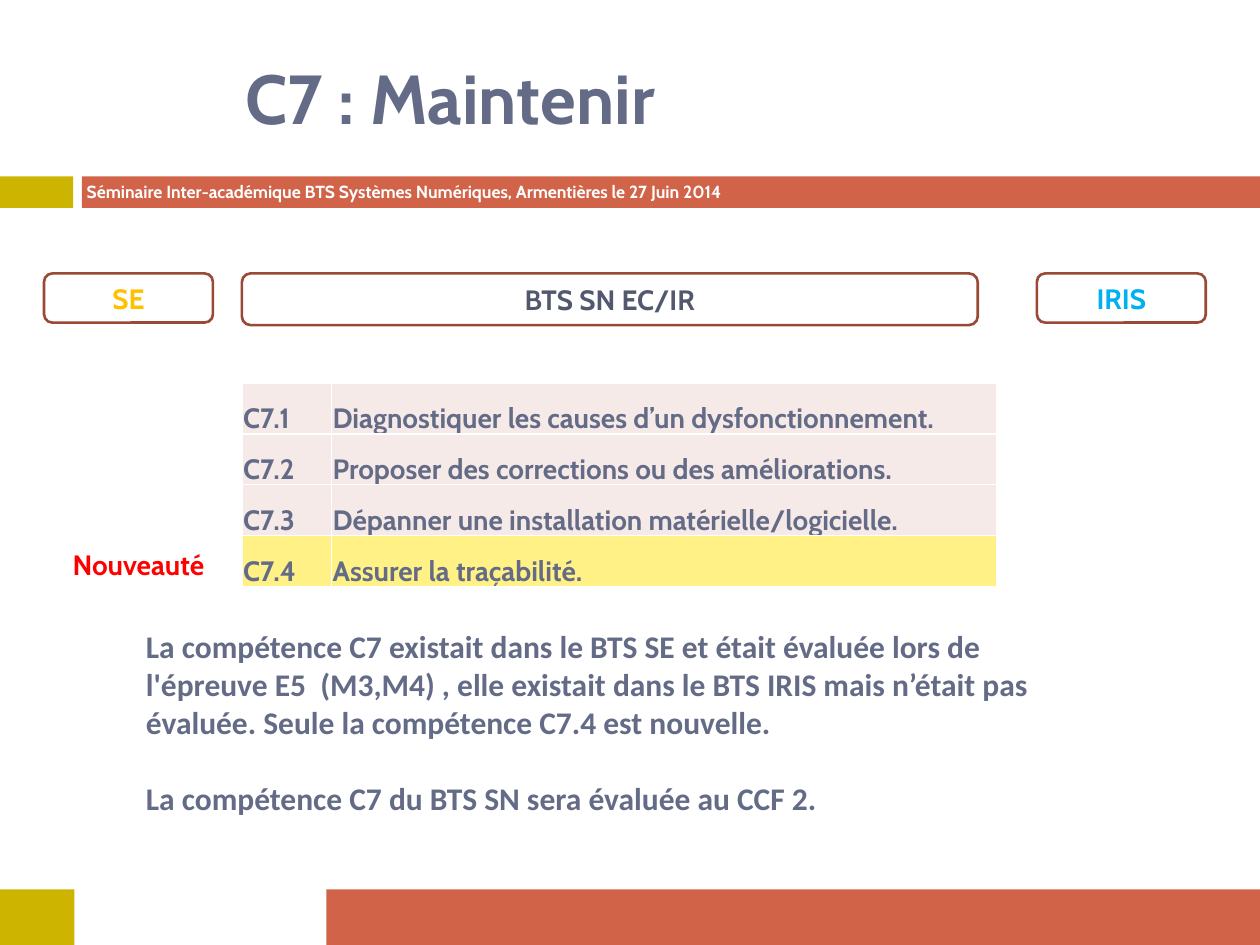
from pptx import Presentation
from pptx.dml.color import RGBColor
from pptx.enum import shapes, text
from pptx.util import Inches, Pt

OLIVE = RGBColor(0xCC, 0xB4, 0x00)
TERRACOTTA = RGBColor(0xD1, 0x63, 0x49)
BROWN = RGBColor(0x9A, 0x49, 0x36)
SLATE = RGBColor(0x64, 0x6B, 0x86)
DARK_SLATE = RGBColor(0x52, 0x58, 0x6E)
AMBER = RGBColor(0xFF, 0xC0, 0x00)
SKY = RGBColor(0x00, 0xB0, 0xF0)
RED = RGBColor(0xFF, 0x00, 0x00)
WHITE = RGBColor(0xFF, 0xFF, 0xFF)
PALE_PINK = RGBColor(0xF6, 0xEA, 0xE8)
PALE_YELLOW = RGBColor(0xFF, 0xF1, 0x85)

SKILLS = [
    ("C7.1", "Diagnostiquer les causes d’un dysfonctionnement."),
    ("C7.2", "Proposer des corrections ou des améliorations."),
    ("C7.3", "Dépanner une installation matérielle/logicielle."),
    ("C7.4", "Assurer la traçabilité."),
]
NEW_SKILL = "C7.4"
COMMENTS = [
    "La compétence C7 existait dans le BTS SE et était évaluée lors de "
    "l'épreuve E5  (M3,M4) , elle existait dans le BTS IRIS mais n’était pas "
    "évaluée. Seule la compétence C7.4 est nouvelle.",
    "La compétence C7 du BTS SN sera évaluée au CCF 2.",
]


def write(frame, *lines, size=16, color=SLATE, font="Cabin", align=text.PP_ALIGN.LEFT,
          anchor=text.MSO_ANCHOR.TOP, gap=0, line_spacing=None):
    """Fill a text frame with bold paragraphs, gap points apart."""
    frame.word_wrap = True
    frame.vertical_anchor = anchor
    for index, line in enumerate(lines):
        paragraph = frame.add_paragraph() if index else frame.paragraphs[0]
        paragraph.text = line
        paragraph.alignment = align
        paragraph.line_spacing = line_spacing
        paragraph.space_before = Pt(gap if index else 0)
        paragraph.font.name = font
        paragraph.font.size = Pt(size)
        paragraph.font.bold = True
        paragraph.font.color.rgb = color


def add_box(slide, kind, box, fill, line=None):
    shape = slide.shapes.add_shape(kind, *map(Inches, box))
    shape.shadow.inherit = False
    shape.fill.solid()
    shape.fill.fore_color.rgb = fill
    if line is None:
        shape.line.fill.background()
    else:
        shape.line.color.rgb = line
        shape.line.width = Pt(1.5)
    return shape


def add_band(slide, top, height, olive_width, red_left):
    """Draw an olive block and a red bar that runs to the right edge."""
    for left, width, fill in ((0, olive_width, OLIVE), (red_left, 10 - red_left, TERRACOTTA)):
        add_box(slide, shapes.MSO_SHAPE.RECTANGLE, (left, top, width, height), fill)


def add_text(slide, box, *lines, **style):
    write(slide.shapes.add_textbox(*map(Inches, box)).text_frame, *lines, **style)


def place_title(slide, box, title):
    shape = slide.shapes.title
    shape.left, shape.top, shape.width, shape.height = map(Inches, box)
    shape.text_frame.auto_size = text.MSO_AUTO_SIZE.NONE
    write(shape.text_frame, title, size=39.6, anchor=text.MSO_ANCHOR.MIDDLE)


def add_label(slide, box, label, color, line=BROWN):
    shape = add_box(slide, shapes.MSO_SHAPE.ROUNDED_RECTANGLE, box, WHITE, line)
    write(shape.text_frame, label, color=color, align=text.PP_ALIGN.CENTER,
          anchor=text.MSO_ANCHOR.MIDDLE)


def add_skill_table(slide, left, top, column_widths, row_height):
    table = slide.shapes.add_table(
        len(SKILLS), len(column_widths), Inches(left), Inches(top),
        Inches(sum(column_widths)), Inches(row_height * len(SKILLS))).table
    table.first_row = table.horz_banding = False
    for column, width in zip(table.columns, column_widths):
        column.width = Inches(width)
    for row, skill in zip(table.rows, SKILLS):
        for cell, content in zip(row.cells, skill):
            cell.fill.solid()
            cell.fill.fore_color.rgb = PALE_YELLOW if skill[0] == NEW_SKILL else PALE_PINK
            cell.margin_left = cell.margin_right = Inches(0.01)
            cell.margin_top, cell.margin_bottom = Inches(0.19), 0
            cell.vertical_anchor = text.MSO_ANCHOR.MIDDLE
            write(cell.text_frame, content, line_spacing=0.8)
            cell.vertical_anchor = text.MSO_ANCHOR.MIDDLE


def main():
    presentation = Presentation()
    presentation.slide_width, presentation.slide_height = Inches(10), Inches(7.5)
    slide = presentation.slides.add_slide(presentation.slide_layouts[5])

    add_band(slide, 1.4, 0.25, olive_width=0.58, red_left=0.65)
    add_band(slide, 7.06, 0.44, olive_width=0.59, red_left=2.59)
    add_text(slide, (0.59, 1.39, 6.06, 0.44),
             "Séminaire Inter-académique BTS Systèmes Numériques, Armentières le 27 Juin 2014",
             size=10, color=WHITE)
    place_title(slide, (1.85, 0.27, 8, 1), "C7 : Maintenir")

    add_label(slide, (0.35, 2.17, 1.34, 0.39), "SE", AMBER)
    add_label(slide, (8.23, 2.17, 1.34, 0.39), "IRIS", SKY)
    add_label(slide, (1.92, 2.17, 5.84, 0.41), "BTS SN EC/IR", DARK_SLATE)

    add_skill_table(slide, 1.92, 3.04, (0.71, 5.28), 0.4)
    add_label(slide, (0.43, 4.34, 1.34, 0.28), "Nouveauté", RED, line=WHITE)
    add_text(slide, (1.06, 4.93, 7.64, 1.89), *COMMENTS, size=18, font="Calibri", gap=22)

    presentation.save("out.pptx")


if __name__ == "__main__":
    main()
